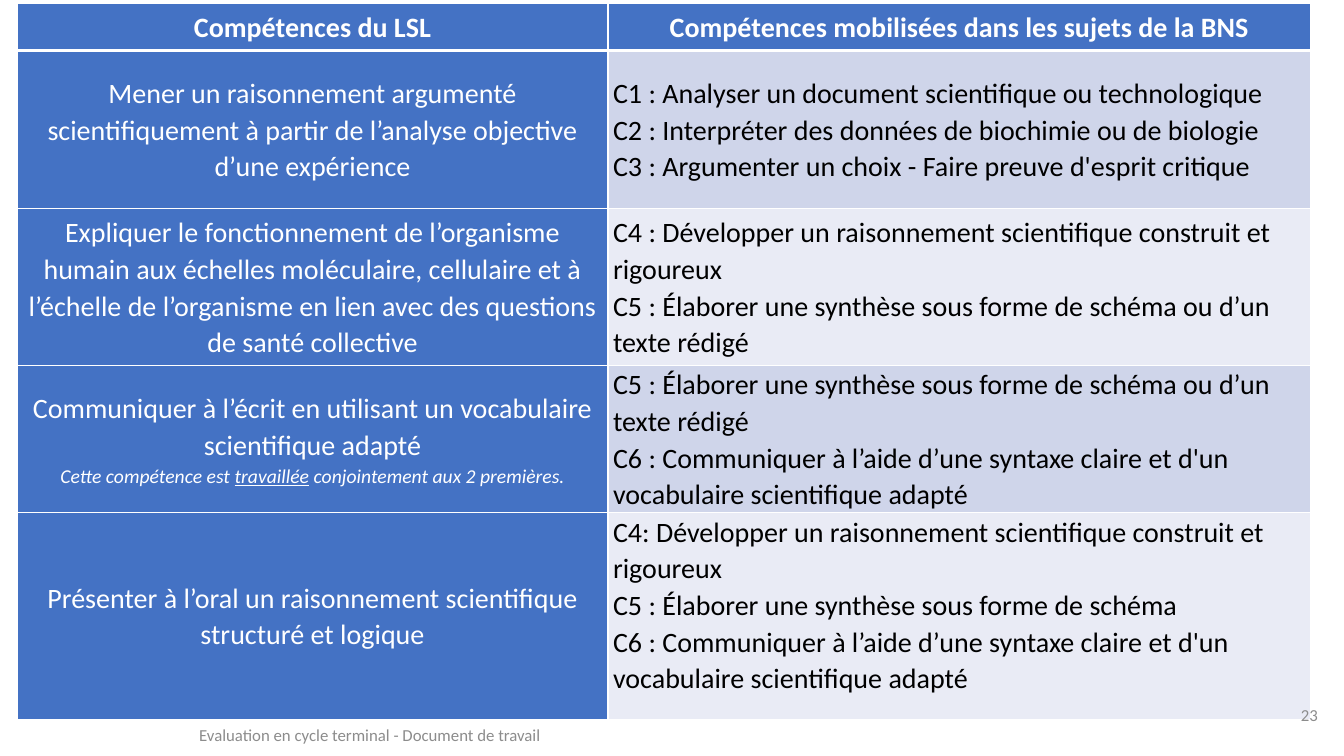
"""Build a slide matching LSL skills with the skills assessed in BNS subjects."""
from lxml.etree import SubElement
from pptx import Presentation
from pptx.dml.color import RGBColor
from pptx.enum.text import MSO_ANCHOR, PP_ALIGN
from pptx.oxml.ns import qn
from pptx.util import Inches, Pt

HEADERS = ("Compétences du LSL", "Compétences mobilisées dans les sujets de la BNS")
SKILLS = [
    ("Mener un raisonnement argumenté scientifiquement à partir de l’analyse objective d’une expérience",
     ["C1 : Analyser un document scientifique ou technologique",
      "C2 : Interpréter des données de biochimie ou de biologie",
      "C3 : Argumenter un choix - Faire preuve d'esprit critique"]),
    ("Expliquer le fonctionnement de l’organisme humain aux échelles moléculaire, cellulaire et à "
     "l’échelle de l’organisme en lien avec des questions de santé collective",
     ["C4 : Développer un raisonnement scientifique construit et rigoureux",
      "C5 : Élaborer une synthèse sous forme de schéma ou d’un texte rédigé"]),
    ("Communiquer à l’écrit en utilisant un vocabulaire scientifique adapté",
     ["C5 : Élaborer une synthèse sous forme de schéma ou d’un texte rédigé",
      "C6 : Communiquer à l’aide d’une syntaxe claire et d'un vocabulaire scientifique adapté"]),
    ("Présenter à l’oral un raisonnement scientifique structuré et logique",
     ["C4: Développer un raisonnement scientifique construit et rigoureux",
      "C5 : Élaborer une synthèse sous forme de schéma",
      "C6 : Communiquer à l’aide d’une syntaxe claire et d'un vocabulaire scientifique adapté"]),
]
NOTE_ROW = 3
NOTE = [("Cette compétence est ", False), ("travaillée", True), (" conjointement aux 2 premières.", False)]
FOOTERS = [
    ("Evaluation en cycle terminal - Document de travail", (0.02, 7.09, 7.3, 0.4), PP_ALIGN.CENTER),
    ("23", (12.33, 6.89, 0.84, 0.4), PP_ALIGN.RIGHT),
]
COLORS = {"blue": "4472C4", "odd": "CFD5EA", "even": "E9EBF5",
          "white": "FFFFFF", "black": "000000", "grey": "8C8C8C"}
FONT = "Calibri"
TABLE_LEFT, TABLE_TOP = 0.17, 0.03
COLUMNS = (5.86, 6.97)
ROWS = (0.47, 1.57, 1.56, 1.39, 2.05)
LAST_BOTTOM_MARGIN = 0.22


def style(paragraph, size, color, alignment, bold=False):
    paragraph.alignment = alignment
    font = paragraph.font
    font.name, font.size, font.bold = FONT, Pt(size), bold
    font.color.rgb = RGBColor.from_string(COLORS[color])


def set_borders(cell, row):
    properties = cell._tc.get_or_add_tcPr()
    widths = {"L": 1, "R": 1, "T": 3 if row == 1 else 1, "B": 3 if row == 0 else 1}
    for side, width in widths.items():
        line = SubElement(properties, qn(f"a:ln{side}"), w=str(Pt(width)))
        fill = SubElement(line, qn("a:solidFill"))
        SubElement(fill, qn("a:srgbClr"), val=COLORS["white"])


def fill_cell(cell, lines, row, column):
    set_borders(cell, row)
    blue = row == 0 or column == 0
    cell.fill.solid()
    band = "blue" if blue else ("odd" if row % 2 else "even")
    cell.fill.fore_color.rgb = RGBColor.from_string(COLORS[band])
    cell.vertical_anchor = MSO_ANCHOR.MIDDLE
    cell.margin_left = cell.margin_right = Inches(0.05)
    cell.margin_top = cell.margin_bottom = 0
    cell.text = "\n".join(lines)
    for paragraph in cell.text_frame.paragraphs:
        style(paragraph, 20, "white" if blue else "black",
              PP_ALIGN.CENTER if blue else PP_ALIGN.LEFT, row == 0)
        paragraph.line_spacing = 1.07


def add_note(cell):
    paragraph = cell.text_frame.add_paragraph()
    style(paragraph, 14, "white", PP_ALIGN.CENTER)
    paragraph.font.italic = True
    paragraph.line_spacing = 1.07
    for text, underlined in NOTE:
        run = paragraph.add_run()
        run.text = text
        if underlined:
            run.font.underline = True


def add_skills_table(slide):
    box = (TABLE_LEFT, TABLE_TOP, sum(COLUMNS), sum(ROWS))
    table = slide.shapes.add_table(len(ROWS), len(COLUMNS), *map(Inches, box)).table
    table.first_row = table.horz_banding = False
    for column, width in zip(table.columns, COLUMNS):
        column.width = Inches(width)
    for row, height in zip(table.rows, ROWS):
        row.height = Inches(height)
    contents = [[[header] for header in HEADERS]] + [[[skill], codes] for skill, codes in SKILLS]
    for row, cells in enumerate(contents):
        for column, lines in enumerate(cells):
            fill_cell(table.cell(row, column), lines, row, column)
    add_note(table.cell(NOTE_ROW, 0))
    table.cell(len(ROWS) - 1, 1).margin_bottom = Inches(LAST_BOTTOM_MARGIN)


def add_footer(slide, text, box, alignment):
    frame = slide.shapes.add_textbox(*map(Inches, box)).text_frame
    frame.word_wrap = True
    frame.vertical_anchor = MSO_ANCHOR.MIDDLE
    frame.text = text
    style(frame.paragraphs[0], 12, "grey", alignment)


def main():
    presentation = Presentation()
    presentation.slide_width, presentation.slide_height = Inches(13.33), Inches(7.5)
    slide = presentation.slides.add_slide(presentation.slide_layouts[6])
    add_skills_table(slide)
    for footer in FOOTERS:
        add_footer(slide, *footer)
    presentation.save("out.pptx")


if __name__ == "__main__":
    main()
